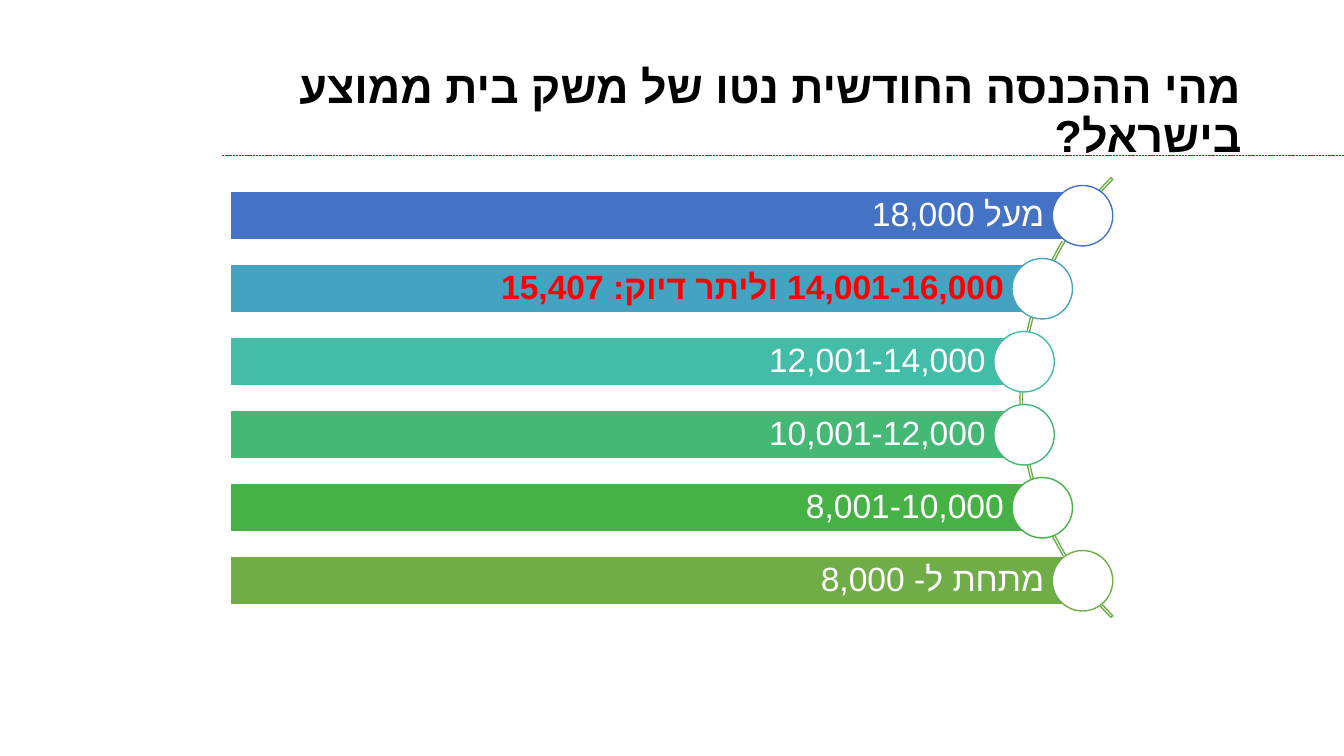
from lxml import etree
from pptx import Presentation
from pptx.dml.color import RGBColor
from pptx.enum import dml, shapes, text
from pptx.oxml.ns import qn
from pptx.util import Pt

COLORS = {
    "black": "000000", "white": "FFFFFF", "red": "FF0000", "rule": "B01A1A",
    "blue": "4472C4", "sky": "44A3C0", "teal": "43BDA7",
    "mint": "44B874", "green": "46B246", "olive": "70AD47",
}


def write_rtl(shape, words, size, color, bold, insets):
    frame = shape.text_frame
    frame.word_wrap = True
    frame.vertical_anchor = text.MSO_ANCHOR.MIDDLE
    frame.margin_left, frame.margin_top, frame.margin_right, frame.margin_bottom = map(Pt, insets)
    paragraph = frame.paragraphs[0]
    paragraph.text = words
    paragraph.alignment = text.PP_ALIGN.RIGHT
    paragraph.line_spacing = 0.9
    font = paragraph.font
    font.name, font.size, font.bold = "Arial", Pt(size), bold
    font.color.rgb = RGBColor.from_string(COLORS[color])
    # Right-to-left direction and the font for Hebrew letters
    properties = paragraph._p.pPr
    properties.set("rtl", "1")
    etree.SubElement(properties.find(qn("a:defRPr")), qn("a:cs"), typeface="Arial")


def add_shape(kind, left, top, width, height, fill, line):
    shape = slide.shapes.add_shape(kind, Pt(left), Pt(top), Pt(width), Pt(height))
    shape.shadow.inherit = False
    if fill:
        shape.fill.solid()
        shape.fill.fore_color.rgb = RGBColor.from_string(COLORS[fill])
    else:
        shape.fill.background()
    shape.line.color.rgb = RGBColor.from_string(COLORS[line])
    shape.line.width = Pt(1)
    return shape


presentation = Presentation()
presentation.slide_width, presentation.slide_height = Pt(960), Pt(540)
slide = presentation.slides.add_slide(presentation.slide_layouts[6])

# Dotted rule under the title
rule = slide.shapes.add_connector(
    shapes.MSO_CONNECTOR.STRAIGHT, Pt(158.4), Pt(110.9), Pt(960), Pt(110.9))
rule.line.color.rgb = RGBColor.from_string(COLORS["rule"])
rule.line.width = Pt(0.5)
rule.line.dash_style = dml.MSO_LINE.SQUARE_DOT
etree.SubElement(rule._element.spPr, qn("a:effectLst"))

# Title
title = slide.shapes.add_textbox(Pt(66), Pt(28.75), Pt(828), Pt(104.4))
write_rtl(title, "מהי ההכנסה החודשית נטו של משק בית ממוצע בישראל?",
          32, "black", True, (7.2, 3.6, 7.2, 3.6))

# Thin arc behind the circles
arc = add_shape(shapes.MSO_SHAPE.BLOCK_ARC, 728.6, 61.9, 444.2, 444.2, None, "olive")
for index, value in enumerate((81, 135, 0.004)):
    arc.adjustments[index] = value

# Answer bars, each ending at the centre of its circle
BAR_LEFT, BAR_HEIGHT, CIRCLE = 164.2, 34.5, 43.2
FIRST_MIDDLE, STEP = 154.1, 52.15
answers = [
    ("מעל 18,000", "blue", 773.3),
    ("14,001-16,000 וליתר דיוק: 15,407", "sky", 744.5),
    ("12,001-14,000", "teal", 731.5),
    ("10,001-12,000", "mint", 731.5),
    ("8,001-10,000", "green", 744.5),
    ("מתחת ל- 8,000", "olive", 773.3),
]
for row, (words, color, center) in enumerate(answers):
    middle = FIRST_MIDDLE + row * STEP
    correct = color == "sky"
    bar = add_shape(shapes.MSO_SHAPE.RECTANGLE, BAR_LEFT, middle - BAR_HEIGHT / 2,
                    center - BAR_LEFT, BAR_HEIGHT, color, "white")
    write_rtl(bar, words, 24, "red" if correct else "white", correct, (5, 5, 27.4, 5))
    add_shape(shapes.MSO_SHAPE.OVAL, center - CIRCLE / 2, middle - CIRCLE / 2,
              CIRCLE, CIRCLE, "white", color)

presentation.save("out.pptx")
